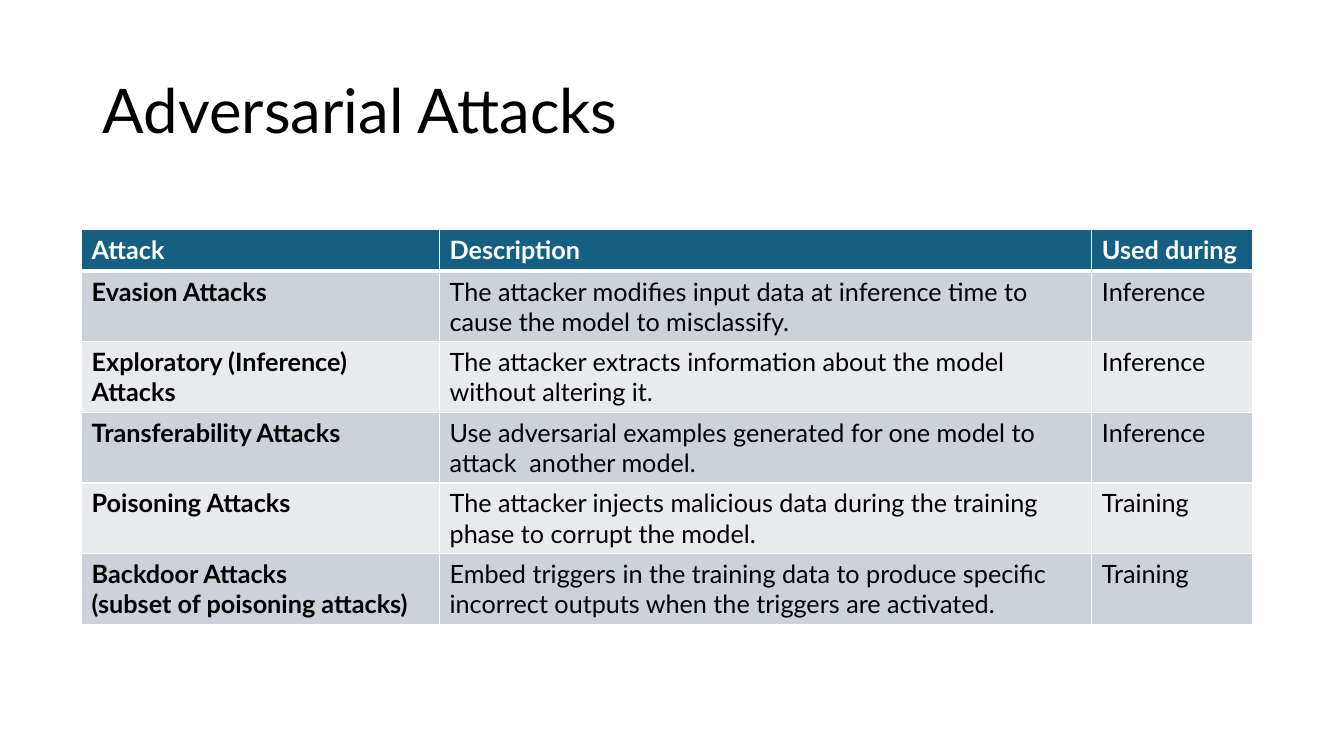
from lxml.etree import SubElement
from pptx import Presentation
from pptx.dml.color import RGBColor
from pptx.enum.text import MSO_ANCHOR, PP_ALIGN
from pptx.oxml.ns import qn
from pptx.util import Inches, Pt

FONT = "Lato"
BLACK, WHITE = "000000", "FFFFFF"
HEADER_FILL = "156082"
BAND_FILLS = ("CCD2D8", "E8EAED")
COLUMN_WIDTHS = (3.55, 6.47, 1.59)
HEADER_HEIGHT, ROW_HEIGHT = 0.41, 0.7
HEADER = ("Attack", "Description", "Used during")
ATTACKS = (
    ("Evasion Attacks",
     "The attacker modifies input data at inference time to cause the model to misclassify.",
     "Inference"),
    ("Exploratory (Inference) Attacks",
     "The attacker extracts information about the model without altering it.",
     "Inference"),
    ("Transferability Attacks",
     "Use adversarial examples generated for one model to attack  another model.",
     "Inference"),
    ("Poisoning Attacks",
     "The attacker injects malicious data during the training phase to corrupt the model.",
     "Training"),
    ("Backdoor Attacks\n(subset of poisoning attacks)",
     "Embed triggers in the training data to produce specific incorrect outputs "
     "when the triggers are activated.",
     "Training"),
)


def color(hex_value):
    return RGBColor.from_string(hex_value)


def add_run(paragraph, text, size, hex_value, bold=False):
    run = paragraph.add_run()
    run.text = text
    run.font.name = FONT
    run.font.size = Pt(size)
    run.font.bold = bold
    run.font.color.rgb = color(hex_value)


def add_title(slide, text):
    title = slide.shapes.title
    title.left, title.top = Inches(0.92), Inches(0.4)
    title.width, title.height = Inches(11.5), Inches(1.45)
    title.text_frame.word_wrap = True
    title.text_frame.vertical_anchor = MSO_ANCHOR.MIDDLE
    paragraph = title.text_frame.paragraphs[0]
    paragraph.alignment = PP_ALIGN.LEFT
    paragraph.line_spacing = 0.9
    add_run(paragraph, text, 44, BLACK)


def set_borders(cell, top, bottom):
    """Draw white cell borders; top and bottom widths are in points."""
    properties = cell._tc.get_or_add_tcPr()
    for side, width in (("L", 1), ("R", 1), ("T", top), ("B", bottom)):
        line = SubElement(properties, qn(f"a:ln{side}"), w=str(Pt(width)))
        fill = SubElement(line, qn("a:solidFill"))
        SubElement(fill, qn("a:srgbClr"), val=WHITE)


def fill_cell(cell, text, fill, text_color, bold):
    cell.fill.solid()
    cell.fill.fore_color.rgb = color(fill)
    frame = cell.text_frame
    for index, line in enumerate(text.split("\n")):
        paragraph = frame.add_paragraph() if index else frame.paragraphs[0]
        add_run(paragraph, line, 18, text_color, bold)


def add_attack_table(slide):
    rows = (HEADER, *ATTACKS)
    height = HEADER_HEIGHT + ROW_HEIGHT * len(ATTACKS)
    table = slide.shapes.add_table(
        len(rows), len(HEADER), Inches(0.81), Inches(2.28),
        Inches(sum(COLUMN_WIDTHS)), Inches(height)).table
    for column, width in zip(table.columns, COLUMN_WIDTHS):
        column.width = Inches(width)
    for row_index, texts in enumerate(rows):
        is_header = row_index == 0
        table.rows[row_index].height = Inches(HEADER_HEIGHT if is_header else ROW_HEIGHT)
        fill = HEADER_FILL if is_header else BAND_FILLS[(row_index - 1) % 2]
        for column_index, text in enumerate(texts):
            cell = table.cell(row_index, column_index)
            set_borders(cell, top=3 if row_index == 1 else 1, bottom=3 if is_header else 1)
            fill_cell(cell, text, fill, WHITE if is_header else BLACK,
                      bold=is_header or column_index == 0)


def main():
    presentation = Presentation()
    presentation.slide_width, presentation.slide_height = Inches(13.33), Inches(7.5)
    slide = presentation.slides.add_slide(presentation.slide_layouts[5])
    add_title(slide, "Adversarial Attacks")
    add_attack_table(slide)
    presentation.save("out.pptx")


if __name__ == "__main__":
    main()
